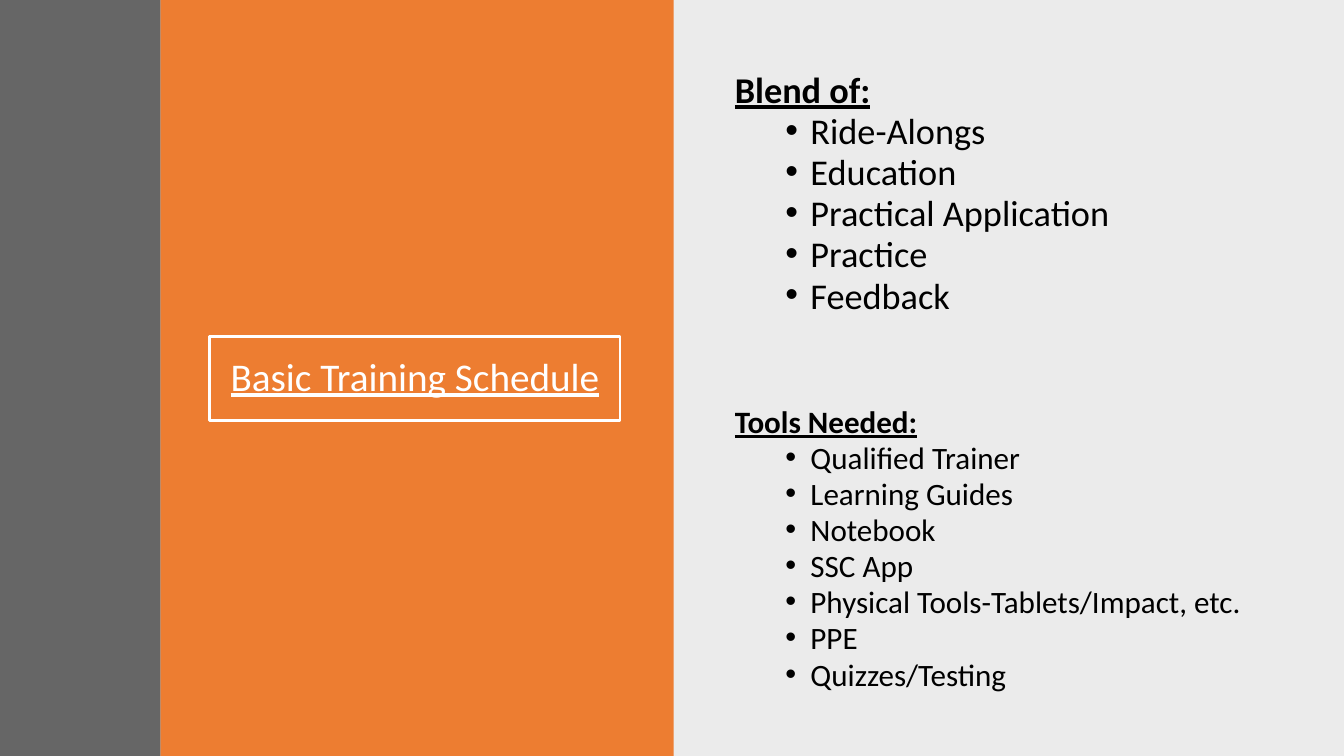
from dataclasses import dataclass

from lxml.etree import SubElement
from pptx import Presentation
from pptx.dml.color import RGBColor
from pptx.enum.shapes import MSO_SHAPE as Shape
from pptx.enum.text import MSO_ANCHOR as Anchor, PP_ALIGN as Align
from pptx.oxml.ns import qn
from pptx.util import Inches, Pt


@dataclass(frozen=True)
class Theme:
    font: str = "Calibri"
    black: str = "000000"
    white: str = "FFFFFF"
    orange: str = "ED7D31"
    charcoal: str = "404040"
    title_size: float = 28
    title_spacing: float = 0.9
    list_spacing: float = 0.8
    item_gap: float = 4.5


THEME = Theme()
WIDTH, HEIGHT = 13.33, 7.5
TITLE = "Basic Training Schedule"
TITLE_BOX = (2.08, 3.34, 4.07, 0.83)
PANELS = [
    (6.67, 6.67, THEME.black, 8),
    (1.59, 5.09, THEME.orange, 100),
    (0, 1.59, THEME.charcoal, 80),
]
LIST_LEFT, LIST_WIDTH = 7.19, 5.53
LISTS = [
    (0.7, 2.79, 25.9, "Blend of:",
     ["Ride-Alongs", "Education", "Practical Application", "Practice", "Feedback"]),
    (4.01, 3.07, 22.2, "Tools Needed:",
     ["Qualified Trainer", "Learning Guides", "Notebook", "SSC App",
      "Physical Tools-Tablets/Impact, etc.", "PPE", "Quizzes/Testing"]),
]


def add_panel(slide, left, width, color, opacity):
    panel = slide.shapes.add_shape(
        Shape.RECTANGLE, Inches(left), 0, Inches(width), Inches(HEIGHT))
    panel.shadow.inherit = False
    panel.line.fill.background()
    panel.fill.solid()
    panel.fill.fore_color.rgb = RGBColor.from_string(color)
    if opacity < 100:
        color_element = panel.fill._xPr.find(qn("a:solidFill"))[0]
        SubElement(color_element, qn("a:alpha"), val=str(opacity * 1000))


def add_run(paragraph, text, size, color, bold=False, underline=False):
    run = paragraph.add_run()
    run.text = text
    run.font.name = THEME.font
    run.font.size = Pt(size)
    run.font.bold = bold
    run.font.underline = underline
    run.font.color.rgb = RGBColor.from_string(color)


def add_title(slide):
    box = slide.shapes.add_shape(Shape.RECTANGLE, *map(Inches, TITLE_BOX))
    box.shadow.inherit = False
    box.fill.background()
    box.line.color.rgb = RGBColor.from_string(THEME.white)
    box.line.width = Pt(2)
    frame = box.text_frame
    frame.word_wrap = True
    frame.vertical_anchor = Anchor.MIDDLE
    paragraph = frame.paragraphs[0]
    paragraph.alignment = Align.CENTER
    paragraph.line_spacing = THEME.title_spacing
    add_run(paragraph, TITLE, THEME.title_size, THEME.white, underline=True)


def add_bullet(paragraph):
    properties = paragraph._p.get_or_add_pPr()
    properties.set("marL", str(Inches(0.75)))
    properties.set("indent", str(Inches(-0.25)))
    SubElement(properties, qn("a:buFont"), typeface="Arial")
    SubElement(properties, qn("a:buChar"), char="•")


def add_list(slide, top, height, size, heading, items):
    box = slide.shapes.add_textbox(
        Inches(LIST_LEFT), Inches(top), Inches(LIST_WIDTH), Inches(height))
    frame = box.text_frame
    frame.word_wrap = True
    paragraph = frame.paragraphs[0]
    paragraph.line_spacing = THEME.list_spacing
    add_run(paragraph, heading, size, THEME.black, bold=True, underline=True)
    for item in items:
        paragraph = frame.add_paragraph()
        paragraph.level = 1
        add_bullet(paragraph)
        paragraph.line_spacing = THEME.list_spacing
        paragraph.space_before = Pt(THEME.item_gap)
        add_run(paragraph, item, size, THEME.black)


def main():
    presentation = Presentation()
    presentation.slide_width = Inches(WIDTH)
    presentation.slide_height = Inches(HEIGHT)
    slide = presentation.slides.add_slide(presentation.slide_layouts[6])
    for panel in PANELS:
        add_panel(slide, *panel)
    add_title(slide)
    for content in LISTS:
        add_list(slide, *content)
    presentation.save("out.pptx")


if __name__ == "__main__":
    main()
